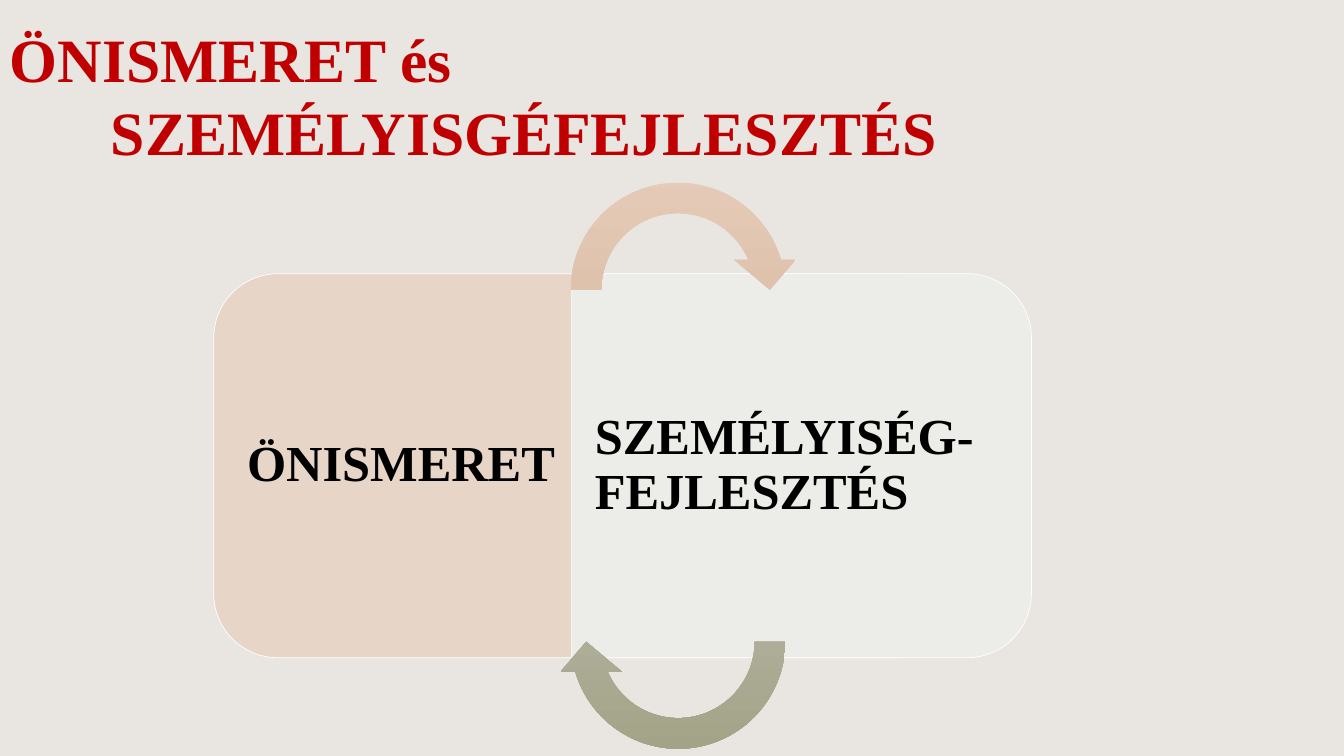
from dataclasses import dataclass

from lxml import etree
from pptx import Presentation
from pptx.dml.color import RGBColor
from pptx.enum.shapes import MSO_SHAPE
from pptx.enum.text import MSO_ANCHOR
from pptx.oxml.ns import qn
from pptx.slide import Slide
from pptx.text.text import _Paragraph as Paragraph
from pptx.util import Inches, Pt

FONT = "Times New Roman"
PANEL_MIDDLE = 4.62
PANEL_HEIGHT = 3.81
LABEL_HEIGHT = 3.44
ARROW_SIZE = 2.43
ARROW_ADJUSTMENTS = (0.125, 11.423, 204.577, 108, 0.125)


@dataclass
class Panel:
    label: str
    left: float
    width: float
    rotation: int
    fill: str
    label_left: float
    label_width: float
    inset_left: float
    inset_right: float


@dataclass
class CycleArrow:
    top: float
    rotation: int
    gradient: tuple[str, ...]


PANELS = [
    Panel("ÖNISMERET", 2.12, 6.8, 270, "E7D5C8", 2.3, 6.61, 0.15, 0.23),
    Panel("SZEMÉLYISÉG-FEJLESZTÉS", 5.67, 4.56, 90, "ECECE8", 5.67, 4.37, 0.23, 0.15),
]
CYCLE_ARROWS = [
    CycleArrow(1.66, 0, ("E5CCB9", "DFC2AC", "DDBA9D")),
    CycleArrow(5.15, 180, ("B9B9A4", "ADAD98", "A2A285")),
]


def color(hex_value: str) -> RGBColor:
    return RGBColor.from_string(hex_value)


def style(paragraph: Paragraph, size: float, hex_value: str) -> None:
    for run in paragraph.runs:
        run.font.name = FONT
        run.font.size = Pt(size)
        run.font.bold = True
        run.font.color.rgb = color(hex_value)


def draw_title(slide: Slide) -> None:
    title = slide.shapes.add_textbox(Inches(0), Inches(0.01), Inches(11.92), Inches(1.87))
    frame = title.text_frame
    frame.word_wrap = True
    frame.vertical_anchor = MSO_ANCHOR.MIDDLE
    frame.text = "ÖNISMERET és\nSZEMÉLYISGÉFEJLESZTÉS"
    for paragraph in frame.paragraphs:
        paragraph.line_spacing = Pt(52)
        style(paragraph, 44, "C00000")
    # The second line is set in by one inch
    frame.paragraphs[1]._p.get_or_add_pPr().set("marL", str(Inches(1)))


def draw_panel(slide: Slide, panel: Panel) -> None:
    # The shape stands upright before it is turned onto its side
    center = panel.left + panel.width / 2
    half = slide.shapes.add_shape(
        MSO_SHAPE.ROUND_2_SAME_RECTANGLE,
        Inches(center - PANEL_HEIGHT / 2), Inches(PANEL_MIDDLE - panel.width / 2),
        Inches(PANEL_HEIGHT), Inches(panel.width))
    half.rotation = panel.rotation
    half.adjustments[0] = 0.167
    half.shadow.inherit = False
    half.fill.solid()
    half.fill.fore_color.rgb = color(panel.fill)
    half.line.color.rgb = color("FFFFFF")
    half.line.width = Pt(0.5)

    label = slide.shapes.add_textbox(
        Inches(panel.label_left), Inches(PANEL_MIDDLE - LABEL_HEIGHT / 2),
        Inches(panel.label_width), Inches(LABEL_HEIGHT))
    frame = label.text_frame
    frame.word_wrap = True
    frame.vertical_anchor = MSO_ANCHOR.MIDDLE
    frame.margin_left = Inches(panel.inset_left)
    frame.margin_right = Inches(panel.inset_right)
    frame.margin_top = frame.margin_bottom = Inches(0.25)
    frame.text = panel.label
    frame.paragraphs[0].line_spacing = 0.9
    style(frame.paragraphs[0], 36, "000000")


def draw_arrow(slide: Slide, arrow: CycleArrow) -> None:
    turn = slide.shapes.add_shape(
        MSO_SHAPE.CIRCULAR_ARROW, Inches(5.51), Inches(arrow.top),
        Inches(ARROW_SIZE), Inches(ARROW_SIZE))
    turn.rotation = arrow.rotation
    for index, value in enumerate(ARROW_ADJUSTMENTS):
        turn.adjustments[index] = value
    turn.shadow.inherit = False
    turn.line.fill.background()

    # Vertical gradient with evenly spaced stops
    turn.fill.gradient()
    turn.fill.gradient_angle = 270
    gradient = turn._element.spPr.find(qn("a:gradFill"))
    gradient.set("rotWithShape", "0")
    stops = gradient.find(qn("a:gsLst"))
    for stop in list(stops):
        stops.remove(stop)
    for index, hex_value in enumerate(arrow.gradient):
        stop = etree.SubElement(stops, qn("a:gs"), pos=str(index * 50000))
        etree.SubElement(stop, qn("a:srgbClr"), val=hex_value)


def main() -> None:
    presentation = Presentation()
    presentation.slide_width = Inches(13.33)
    presentation.slide_height = Inches(7.5)
    slide = presentation.slides.add_slide(presentation.slide_layouts[6])
    slide.background.fill.solid()
    slide.background.fill.fore_color.rgb = color("E9E5E1")

    draw_title(slide)
    for panel in PANELS:
        draw_panel(slide, panel)
    for arrow in CYCLE_ARROWS:
        draw_arrow(slide, arrow)
    presentation.save("out.pptx")


if __name__ == "__main__":
    main()
